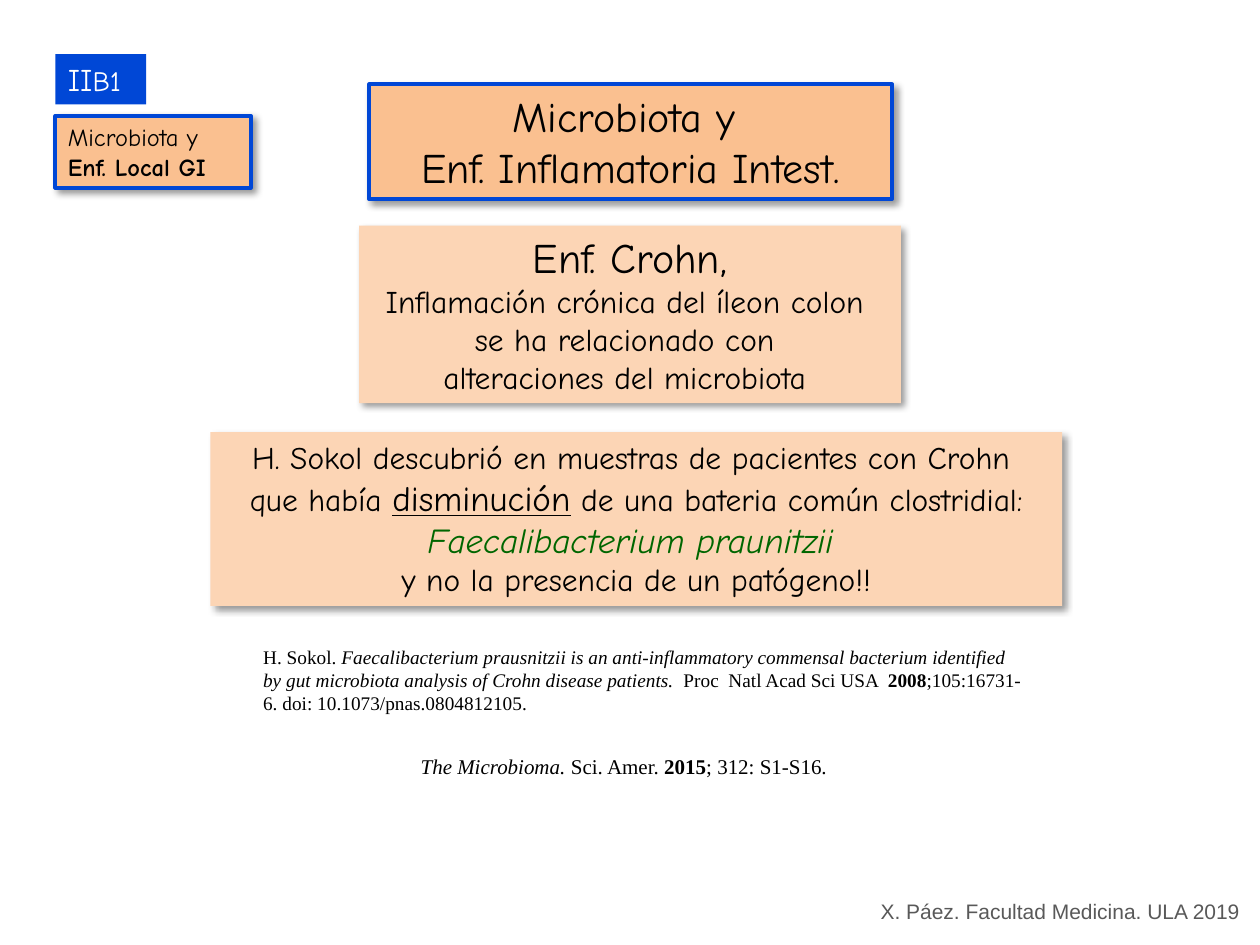
"""Build a slide on gut microbiota and Crohn disease."""
import lxml.etree
import pptx
import pptx.dml.color
import pptx.enum.shapes
import pptx.enum.text
import pptx.oxml.ns
import pptx.util

Inches = pptx.util.Inches
HUES = {
    "blue": "0047D6", "peach": "FCD5B5", "orange": "FAC090", "green": "006600",
    "black": "000000", "white": "FFFFFF", "gray": "595959",
}
COMIC, TIMES = "Comic Neue", "Times New Roman"


def tint(name):
    return pptx.dml.color.RGBColor.from_string(HUES[name])


def put(para, text, size=18, face=COMIC, hue="black", bold=False, slant=False, under=False):
    run = para.add_run()
    run.text = text
    font = run.font
    font.size = pptx.util.Pt(size)
    font.name = face
    font.color.rgb = tint(hue)
    font.bold, font.italic, font.underline = bold, slant, under


def fill_text(shape, lines, center=False, wrap=False, **style):
    frame = shape.text_frame
    frame.word_wrap = wrap
    frame.vertical_anchor = pptx.enum.text.MSO_ANCHOR.TOP
    align = pptx.enum.text.PP_ALIGN
    for row, line in enumerate(lines):
        para = frame.add_paragraph() if row else frame.paragraphs[0]
        para.alignment = align.CENTER if center else align.LEFT
        for text, extra in line:
            put(para, text, **{**style, **extra})


def shade(shape):
    effects = shape._element.spPr.find(pptx.oxml.ns.qn("a:effectLst"))
    effects.append(lxml.etree.fromstring(
        f'<a:outerShdw {pptx.oxml.ns.nsdecls("a")} blurRad="50800" dist="38100" '
        'dir="2700000" algn="tl" rotWithShape="0">'
        f'<a:srgbClr val="{HUES["black"]}"><a:alpha val="40000"/></a:srgbClr></a:outerShdw>'))


def add_box(slide, place, lines, fill, edge=None, shadow=True, **style):
    kind = pptx.enum.shapes.MSO_SHAPE.RECTANGLE
    box = slide.shapes.add_shape(kind, *map(Inches, place))
    box.shadow.inherit = False
    box.fill.solid()
    box.fill.fore_color.rgb = tint(fill)
    if edge:
        box.line.color.rgb = tint(edge)
        box.line.width = pptx.util.Pt(2.25)
    else:
        box.line.fill.background()
    if shadow:
        shade(box)
    fill_text(box, lines, **style)


def add_note(slide, place, line, **style):
    fill_text(slide.shapes.add_textbox(*map(Inches, place)), [line], **style)


def main():
    deck = pptx.Presentation()
    deck.slide_width, deck.slide_height = Inches(10), Inches(7.5)
    slide = deck.slides.add_slide(deck.slide_layouts[6])

    add_box(slide, (0.44, 0.43, 0.72, 0.4), [[("II", {}), ("B1", {"size": 16})]],
            "blue", shadow=False, hue="white")
    add_box(slide, (0.44, 0.92, 1.55, 0.57),
            [[("Microbiota y", {})], [("Enf. Local GI", {"bold": True})]],
            "orange", edge="blue", wrap=True, size=14)
    add_box(slide, (2.93, 0.67, 4.15, 0.91),
            [[("Microbiota y ", {})], [("Enf. Inflamatoria Intest.", {})]],
            "orange", edge="blue", center=True, size=24)
    add_box(slide, (2.85, 1.79, 4.3, 1.41), [
        [("Enf. Crohn,", {"size": 24})],
        [("Inflamación crónica del íleon colon ", {})],
        [("se ha relacionado con ", {})],
        [("alteraciones del microbiota ", {})],
    ], "peach", center=True)
    add_box(slide, (1.67, 3.43, 6.76, 1.38), [
        [("H. Sokol descubrió en muestras de pacientes con Crohn ", {})],
        [("que había ", {}), ("disminución", {"size": 20, "under": True}),
         (" de una bateria común clostridial:", {})],
        [("Faecalibacterium praunitzii ", {"size": 20, "hue": "green", "slant": True})],
        [("y no la presencia de un patógeno!!", {})],
    ], "peach", center=True)

    add_note(slide, (1.99, 5.07, 6.24, 0.66), [
        ("H. Sokol. ", {}),
        ("Faecalibacterium prausnitzii is an anti-inflammatory commensal bacterium "
         "identified by gut microbiota analysis of Crohn disease patients.  ", {"slant": True}),
        ("Proc  Natl Acad Sci USA  ", {}),
        ("2008", {"bold": True}),
        (";105:16731-6. doi: 10.1073/pnas.0804812105.", {}),
    ], wrap=True, size=11, face=TIMES)
    add_note(slide, (3.24, 5.93, 3.46, 0.3), [
        ("The Microbioma. ", {"slant": True}), ("Sci. Amer. ", {}),
        ("2015", {"bold": True}), ("; 312: S1-S16.", {}),
    ], size=12, face=TIMES)
    add_note(slide, (6.89, 7.08, 3.08, 0.3), [("X. Páez. Facultad Medicina. ULA 2019", {})],
             size=12, face="Arial", hue="gray")
    deck.save("out.pptx")


if __name__ == "__main__":
    main()
